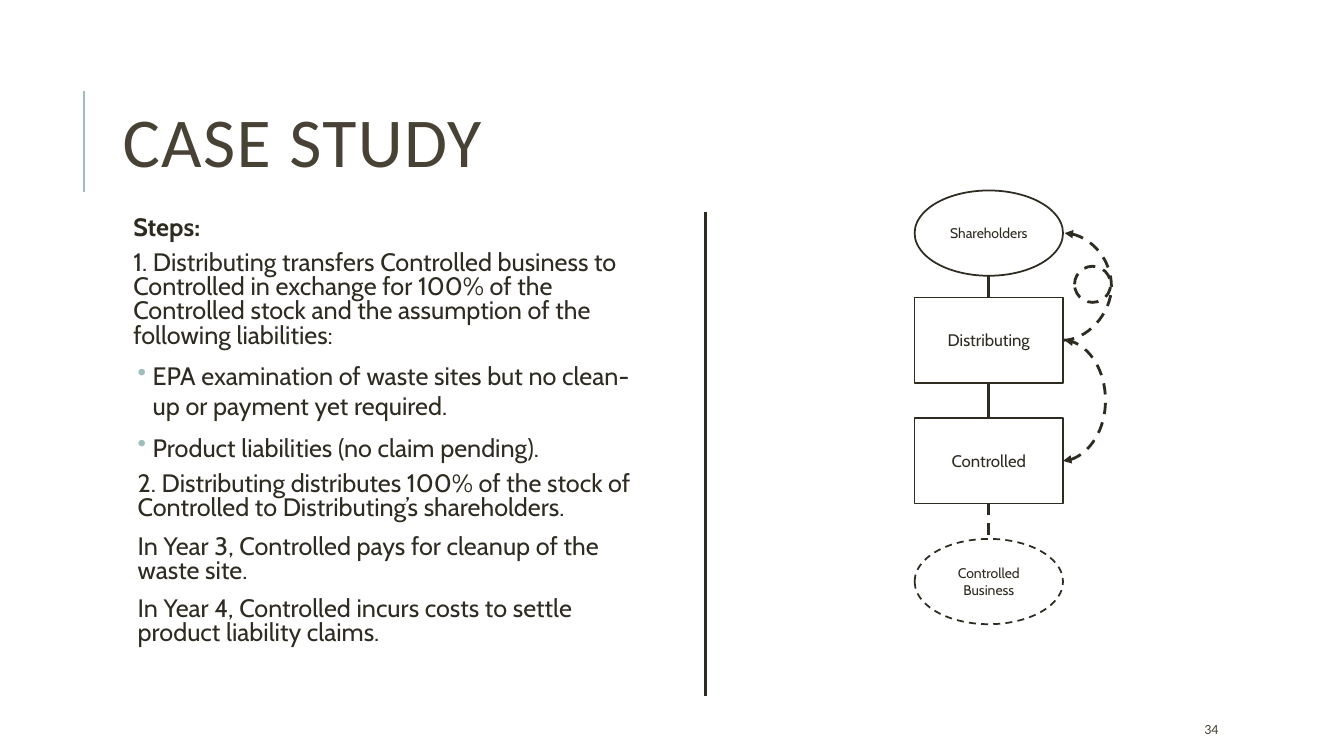
from dataclasses import dataclass

from lxml import etree
from pptx import Presentation
from pptx.dml.color import RGBColor
from pptx.enum.dml import MSO_LINE
from pptx.enum.shapes import MSO_CONNECTOR, MSO_SHAPE
from pptx.enum.text import MSO_ANCHOR, PP_ALIGN
from pptx.oxml.ns import qn
from pptx.util import Cm, Pt

INK = RGBColor(0x2E, 0x2B, 0x21)
BROWN = RGBColor(0x47, 0x42, 0x33)
TEAL = RGBColor(0x9C, 0xBE, 0xBD)
RECT, OVAL = MSO_SHAPE.RECTANGLE, MSO_SHAPE.OVAL
STRAIGHT, CURVE = MSO_CONNECTOR.STRAIGHT, MSO_CONNECTOR.CURVE
DASH = MSO_LINE.DASH
MIDDLE, TOP = MSO_ANCHOR.MIDDLE, MSO_ANCHOR.TOP
CENTER, LEFT = PP_ALIGN.CENTER, PP_ALIGN.LEFT

# Chart column, in cm
NODE_X, NODE_W, NODE_H = 23.05, 3.74, 2.15
NODE_MID, NODE_RIGHT = NODE_X + NODE_W / 2, NODE_X + NODE_W
CURVE_W = 0.04


@dataclass
class Step:
    text: str
    indent: float
    hang: float = 0
    spacing: float = 0.8
    after: float = 2
    bold: bool = False


@dataclass
class Node:
    text: str
    shape: int
    top: float
    size: float
    inset: float
    dash: bool = False

    @property
    def middle(self) -> float:
        return self.top + NODE_H / 2


@dataclass
class Arc:
    start: Node
    end: Node
    bulge: float
    ends: tuple


STEPS = [
    Step("Steps:", 0.25, bold=True),
    Step("1. Distributing transfers Controlled business to Controlled in exchange for "
         "100% of the Controlled stock and the assumption of the following liabilities:", 0.25),
    Step("EPA examination of waste sites but no clean-up or payment yet required.",
         0.74, 0.38, 1),
    Step("Product liabilities (no claim pending).", 0.74, 0.38, 1),
    Step("2. Distributing distributes 100% of the stock of Controlled to "
         "Distributing’s shareholders.", 0.36, after=4),
    Step("In Year 3, Controlled pays for cleanup of the waste site.", 0.36, after=4),
    Step("In Year 4, Controlled incurs costs to settle product liability claims.",
         0.36, after=4),
]

SHAREHOLDERS = Node("Shareholders", OVAL, 4.8, 10, 0)
DISTRIBUTING = Node("Distributing", RECT, 7.5, 12, 0.13)
CONTROLLED = Node("Controlled", RECT, 10.54, 12, 0.13)
BUSINESS = Node("Controlled Business", OVAL, 13.58, 10, 0, dash=True)
NODES = [SHAREHOLDERS, DISTRIBUTING, CONTROLLED, BUSINESS]
ARCS = [
    Arc(DISTRIBUTING, SHAREHOLDERS, 1.22, ("tailEnd",)),
    Arc(CONTROLLED, DISTRIBUTING, 1.07, ("headEnd", "tailEnd")),
]


def add_text(p, text: str, size: float, font="Cabin", color=INK, bold=False,
             align=LEFT, spacing=1.0, before=0, after=0, track=0):
    p.alignment, p.line_spacing = align, spacing
    p.space_before, p.space_after = Pt(before), Pt(after)
    r = p.add_run()
    r.text = text
    r.font.name, r.font.size, r.font.bold = font, Pt(size), bold
    r.font.color.rgb = color
    if track:
        r.font._element.set("spc", str(track * 100))


def set_frame(tf, inset: float, anchor=MIDDLE):
    tf.word_wrap, tf.vertical_anchor = True, anchor
    tf.margin_left = tf.margin_right = Cm(inset)
    tf.margin_top = tf.margin_bottom = Cm(min(inset, 0.13))


def add_box(s, x: float, y: float, w: float, h: float, inset=0.25, anchor=MIDDLE):
    tf = s.shapes.add_textbox(Cm(x), Cm(y), Cm(w), Cm(h)).text_frame
    set_frame(tf, inset, anchor)
    return tf


def set_line(line, width: float, color=INK, dash=False):
    line.color.rgb, line.width = color, Pt(width)
    if dash:
        line.dash_style = DASH


def add_shape(s, kind: int, x: float, y: float, w: float, h: float, width: float, dash: bool):
    sp = s.shapes.add_shape(kind, Cm(x), Cm(y), Cm(w), Cm(h))
    sp.shadow.inherit = False
    sp.fill.background()
    set_line(sp.line, width, dash=dash)
    return sp


def add_line(s, x1: float, y1: float, x2: float, y2: float, width=2.0,
             color=INK, dash=False, kind=STRAIGHT):
    cx = s.shapes.add_connector(kind, Cm(x1), Cm(y1), Cm(x2), Cm(y2))
    set_line(cx.line, width, color, dash)
    etree.SubElement(cx._element.spPr, qn("a:effectLst"))
    return cx


def add_arc(s, arc: Arc):
    cx = add_line(s, NODE_RIGHT, arc.start.middle, NODE_RIGHT + CURVE_W, arc.end.middle,
                  dash=True, kind=CURVE)
    geom = cx._element.spPr.find(qn("a:prstGeom"))
    guides = geom.find(qn("a:avLst"))
    if guides is None:
        guides = etree.SubElement(geom, qn("a:avLst"))
    adjust = round(arc.bulge / CURVE_W * 100000)
    etree.SubElement(guides, qn("a:gd"), name="adj1", fmla=f"val {adjust}")
    ln = cx._element.spPr.find(qn("a:ln"))
    for end in arc.ends:
        etree.SubElement(ln, qn(f"a:{end}"), type="triangle")


def add_step(p, step: Step):
    add_text(p, step.text, 18, bold=step.bold, spacing=step.spacing,
             before=6, after=step.after)
    pPr = p._p.get_or_add_pPr()
    pPr.set("marL", str(Cm(step.indent)))
    pPr.set("indent", str(-Cm(step.hang)))
    if step.hang:
        color = etree.SubElement(pPr, qn("a:buClr"))
        etree.SubElement(color, qn("a:srgbClr"), val=str(TEAL))
        etree.SubElement(pPr, qn("a:buChar"), char="•")


def main():
    prs = Presentation()
    prs.slide_width, prs.slide_height = Cm(33.87), Cm(19.05)
    s = prs.slides.add_slide(prs.slide_layouts[6])

    # Title with accent rule
    add_line(s, 2.12, 4.83, 2.12, 2.3, 1.5, TEAL)
    tf = add_box(s, 2.84, 1.63, 27, 4.17)
    add_text(tf.paragraphs[0], "CASE STUDY", 50, "Calibri", BROWN, spacing=0.8, track=1)

    # Steps
    tf = add_box(s, 2.98, 5.33, 13.2, 12.1, 0.13, TOP)
    for i, step in enumerate(STEPS):
        add_step(tf.add_paragraph() if i else tf.paragraphs[0], step)

    # Divider
    add_line(s, 17.78, 5.33, 17.78, 17.53)

    # Ownership chart
    for node in NODES:
        sp = add_shape(s, node.shape, NODE_X, node.top, NODE_W, NODE_H, 1.25, node.dash)
        set_frame(sp.text_frame, node.inset)
        add_text(sp.text_frame.paragraphs[0], node.text, node.size, align=CENTER)
    for upper, lower in zip(NODES, NODES[1:]):
        add_line(s, NODE_MID, upper.top + NODE_H, NODE_MID, lower.top, dash=lower.dash)

    # Transfers and distributed stock
    for arc in ARCS:
        add_arc(s, arc)
    add_shape(s, OVAL, 27.08, 6.71, 0.91, 0.91, 2, True)

    # Slide number
    tf = add_box(s, 30.1, 17.98, 2.69, 0.76)
    add_text(tf.paragraphs[0], "34", 10, "Calibri", BROWN)

    prs.save("out.pptx")


if __name__ == "__main__":
    main()
